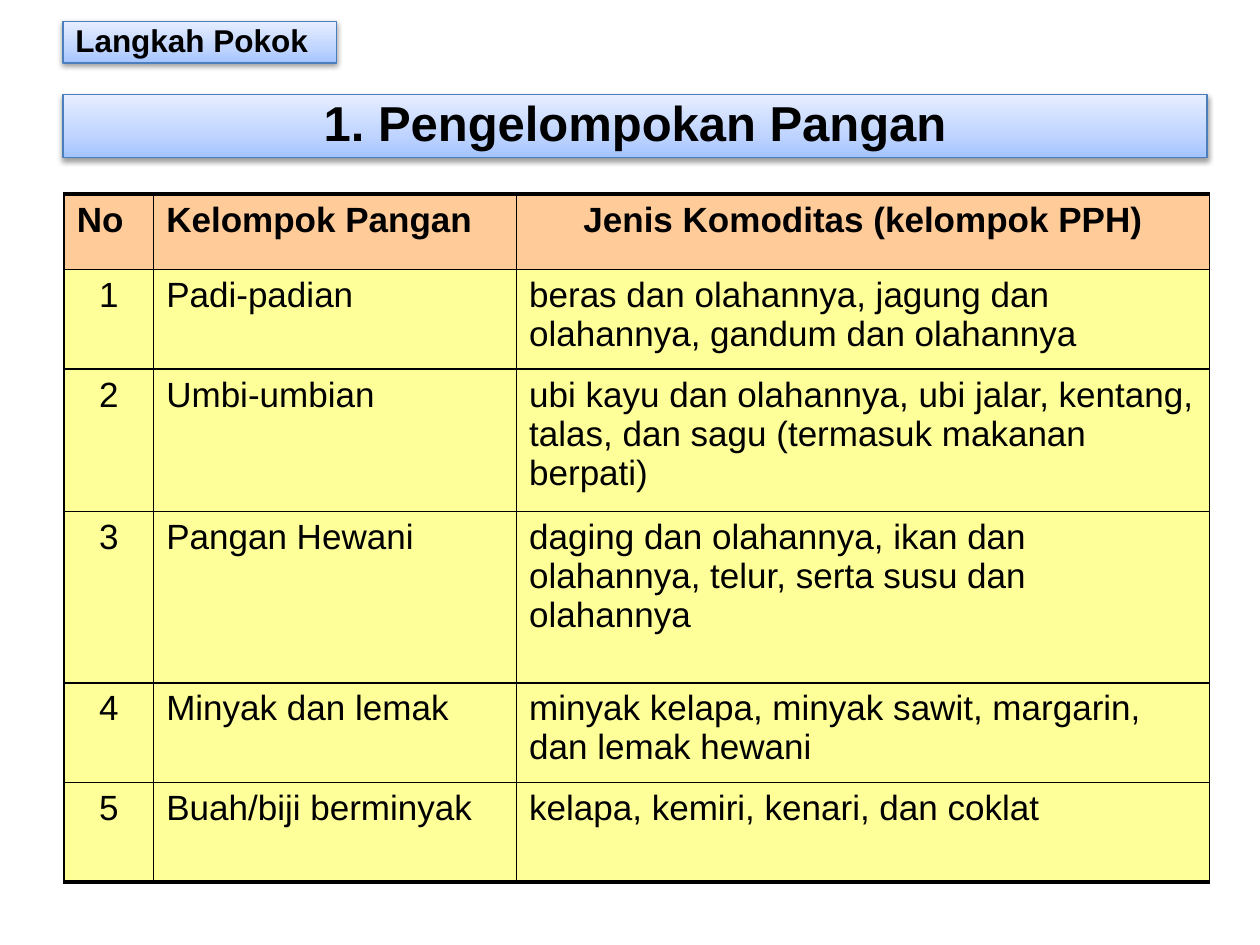
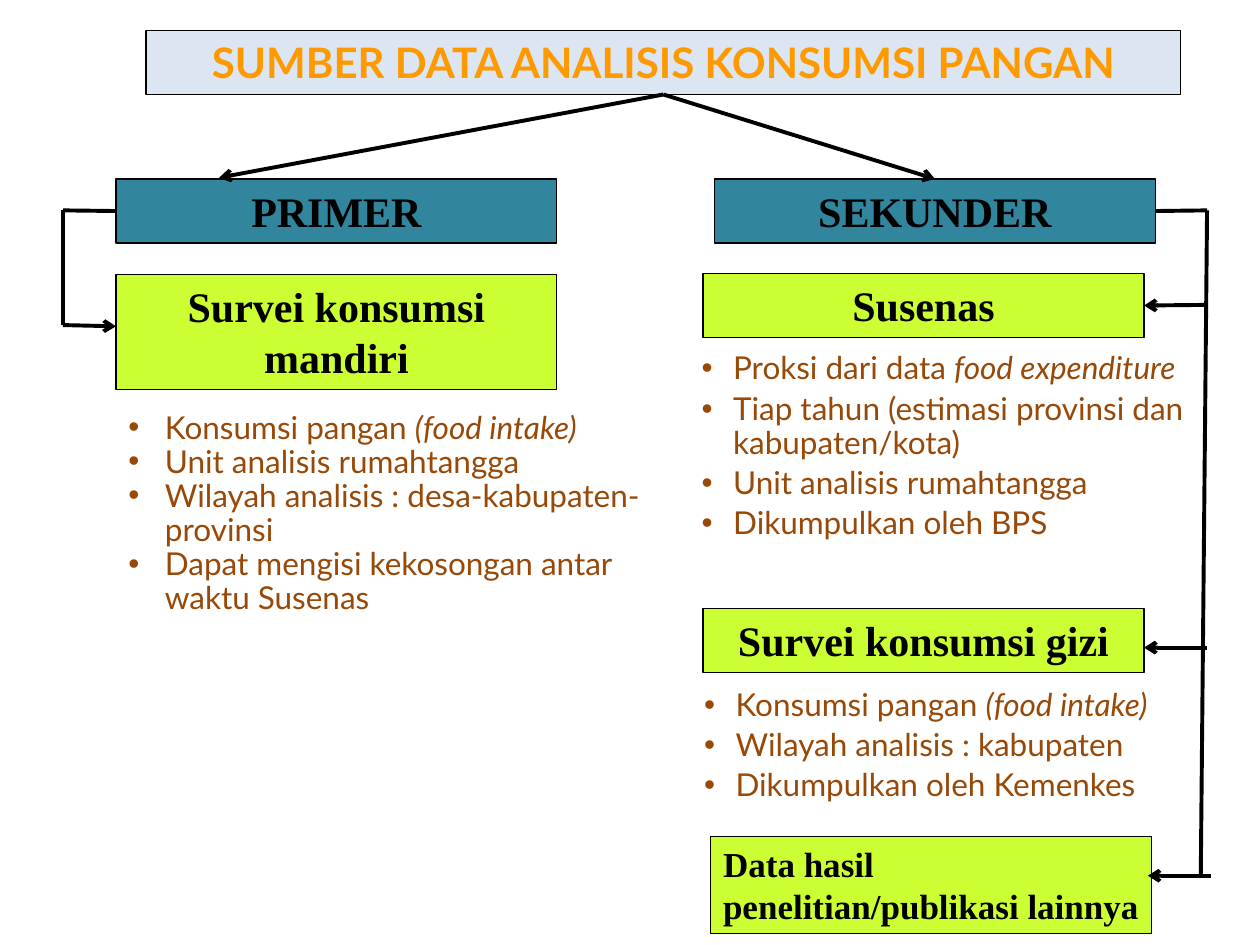
"""Build two slides on food groups and food consumption data sources."""
from lxml import etree
from pptx import Presentation
from pptx import util as u
from pptx.dml.color import RGBColor
from pptx.enum import shapes, text
from pptx.oxml import parse_xml
from pptx.oxml.ns import nsdecls, qn

BLACK = RGBColor(0x00, 0x00, 0x00)
PEACH = RGBColor(0xFF, 0xCC, 0x99)
YELLOW = RGBColor(0xFF, 0xFF, 0x99)
BAND_LINE = RGBColor(0x4B, 0x7E, 0xBC)
PALE_BLUE = RGBColor(0xDC, 0xE6, 0xF2)
ORANGE = RGBColor(0xFF, 0x99, 0x00)
TEAL = RGBColor(0x31, 0x85, 0x9C)
LIME = RGBColor(0xCC, 0xFF, 0x33)
BROWN = RGBColor(0x98, 0x48, 0x07)
BAND_STOPS = [(0, "A4C4FF"), (35, "BFD4FF"), (100, "E6EEFF")]
SANS, BODY, SERIF = "Arial", "Lato", "Times New Roman"
LEFT, CENTER = text.PP_ALIGN.LEFT, text.PP_ALIGN.CENTER

BANDS = [
    ("1. Pengelompokan Pangan", (0.5, 0.75, 9.08, 0.5), 28, CENTER),
    ("Langkah Pokok", (0.5, 0.17, 2.17, 0.33), 18, LEFT),
]
FOOD_GROUPS = [
    ("No", "Kelompok Pangan", "Jenis Komoditas (kelompok PPH)"),
    ("1", "Padi-padian", "beras dan olahannya, jagung dan olahannya, gandum dan olahannya"),
    ("2", "Umbi-umbian", "ubi kayu dan olahannya, ubi jalar, kentang, talas, dan sagu "
                         "(termasuk makanan berpati)"),
    ("3", "Pangan Hewani", "daging dan olahannya, ikan dan olahannya, telur, serta susu "
                           "dan olahannya"),
    ("4", "Minyak dan lemak", "minyak kelapa, minyak sawit, margarin, dan lemak hewani"),
    ("5", "Buah/biji berminyak", "kelapa, kemiri, kenari, dan coklat"),
]
COLUMN_WIDTHS = [0.71, 2.88, 5.5]
ROW_HEIGHTS = [0.6, 0.79, 1.13, 1.36, 0.79, 0.79]

SOURCE_BOXES = {
    "title": ("SUMBER DATA ANALISIS KONSUMSI PANGAN", (1.16, 0.24, 8.21, 0.51),
              PALE_BLUE, BODY, 24, ORANGE, CENTER),
    "primary": ("PRIMER", (0.92, 1.42, 3.5, 0.51), TEAL, SERIF, 24, BLACK, CENTER),
    "secondary": ("SEKUNDER", (5.67, 1.42, 3.5, 0.51), TEAL, SERIF, 24, BLACK, CENTER),
    "own survey": ("Survei konsumsi mandiri", (0.92, 2.18, 3.5, 0.91),
                   LIME, SERIF, 24, BLACK, CENTER),
    "nutrition": ("Survei konsumsi gizi", (5.58, 4.83, 3.5, 0.51),
                  LIME, SERIF, 24, BLACK, CENTER),
    "susenas": ("Susenas", (5.58, 2.17, 3.5, 0.51), LIME, SERIF, 24, BLACK, CENTER),
    "other": ("Data hasil penelitian/publikasi lainnya", (5.64, 6.64, 3.5, 0.77),
              LIME, SERIF, 20, BLACK, LEFT),
}
BULLET_LISTS = [
    ((5.42, 2.75, 4.25, 2.92), 0.3, 0.25, 3.6, [
        ("Proksi dari data ", "food expenditure"),
        ("Tiap tahun (estimasi provinsi dan kabupaten/kota)",),
        ("Unit analisis rumahtangga",),
        ("Dikumpulkan oleh BPS",)]),
    ((5.33, 5.42, 4.33, 1.66), 0.41, 0.25, 3.6, [
        ("Konsumsi pangan ", "(food intake)"),
        ("Wilayah analisis : kabupaten",),
        ("Dikumpulkan oleh Kemenkes",)]),
    ((0.92, 3.22, 4.35, 1.86), 0.29, 0.29, 0, [
        ("Konsumsi pangan ", "(food intake)"),
        ("Unit analisis rumahtangga",),
        ("Wilayah analisis : desa-kabupaten-provinsi",),
        ("Dapat mengisi kekosongan antar waktu Susenas",)]),
]
TOP, SIDE_LEFT, BOTTOM, SIDE_RIGHT = range(4)
LINKS = [
    ((5.27, 0.75), (1.74, 1.41), True, ("title", BOTTOM), None),
    ((5.27, 0.75), (7.42, 1.42), True, ("title", BOTTOM), ("secondary", TOP)),
    ((0.92, 1.67), (0.5, 1.67), False, ("primary", SIDE_LEFT), None),
    ((0.5, 1.67), (0.5, 2.58), False, None, None),
    ((0.5, 2.58), (0.92, 2.59), True, None, None),
    ((9.58, 1.67), (9.53, 6.95), False, None, None),
    ((9.58, 1.67), (9.17, 1.67), False, None, ("secondary", SIDE_RIGHT)),
    ((9.58, 2.42), (9.08, 2.42), True, None, ("susenas", SIDE_RIGHT)),
    ((9.58, 5.14), (9.08, 5.14), True, None, None),
    ((9.61, 6.95), (9.11, 6.95), True, None, None),
]


def inches(values):
    return [u.Inches(value) for value in values]


def add_span(para, words, font, size, color, bold=False, italic=False):
    span = para.add_run()
    span.text = words
    span.font.name = font
    span.font.size = u.Pt(size)
    span.font.color.rgb = color
    span.font.bold = bold
    span.font.italic = italic


def add_box(page, words, place, font, size, color, align, line_color):
    box = page.shapes.add_shape(shapes.MSO_SHAPE.RECTANGLE, *inches(place))
    box.shadow.inherit = False
    box.line.color.rgb = line_color
    box.line.width = u.Pt(0.75)
    frame = box.text_frame
    frame.word_wrap = True
    frame.vertical_anchor = text.MSO_ANCHOR.TOP
    para = frame.paragraphs[0]
    para.alignment = align
    add_span(para, words, font, size, color, bold=True)
    return box


def add_band(page, words, place, size, align):
    band = add_box(page, words, place, SANS, size, BLACK, align, BAND_LINE)
    band.text_frame.vertical_anchor = text.MSO_ANCHOR.MIDDLE
    band.text_frame.paragraphs[0].line_spacing = 0.9
    band.fill.gradient()
    band.fill.gradient_angle = 90
    properties = band._element.spPr
    stops = properties.find(".//" + qn("a:gsLst"))
    for stop in list(stops):
        stops.remove(stop)
    for position, color in BAND_STOPS:
        stop = etree.SubElement(stops, qn("a:gs"), pos=str(position * 1000))
        etree.SubElement(stop, qn("a:srgbClr"), val=color)
    properties.find(qn("a:effectLst")).append(parse_xml(
        f'<a:outerShdw {nsdecls("a")} blurRad="40000" dist="20000" dir="5400000" '
        'rotWithShape="0"><a:srgbClr val="000000"><a:alpha val="38000"/></a:srgbClr>'
        '</a:outerShdw>'))


def set_borders(cell, top, bottom):
    properties = cell._tc.get_or_add_tcPr()
    widths = {"a:lnL": 1, "a:lnR": 1, "a:lnT": top, "a:lnB": bottom}
    for index, (tag, width) in enumerate(widths.items()):
        properties.insert(index, parse_xml(
            f'<{tag} {nsdecls("a")} w="{u.Pt(width)}"><a:solidFill>'
            f'<a:srgbClr val="{BLACK}"/></a:solidFill></{tag}>'))


def add_food_table(page):
    place = inches((0.51, 1.54, sum(COLUMN_WIDTHS), sum(ROW_HEIGHTS)))
    table = page.shapes.add_table(len(FOOD_GROUPS), len(COLUMN_WIDTHS), *place).table
    table.first_row = table.horz_banding = False
    for column, width in zip(table.columns, COLUMN_WIDTHS):
        column.width = u.Inches(width)
    last = len(FOOD_GROUPS) - 1
    for r, (entries, height) in enumerate(zip(FOOD_GROUPS, ROW_HEIGHTS)):
        table.rows[r].height = u.Inches(height)
        header = r == 0
        for c, words in enumerate(entries):
            cell = table.cell(r, c)
            cell.fill.solid()
            cell.fill.fore_color.rgb = PEACH if header else YELLOW
            set_borders(cell, 2.25 if header else 1, 2.25 if r == last else 1)
            para = cell.text_frame.paragraphs[0]
            para.alignment = CENTER if c == (2 if header else 0) else LEFT
            add_span(para, words, SANS, 20, BLACK, bold=header)


def add_bullets(page, place, margin, hanging, gap, items):
    frame = page.shapes.add_textbox(*inches(place)).text_frame
    frame.word_wrap = True
    for index, parts in enumerate(items):
        para = frame.add_paragraph() if index else frame.paragraphs[0]
        properties = para._p.get_or_add_pPr()
        properties.set("marL", str(u.Inches(margin)))
        properties.set("indent", str(-u.Inches(hanging)))
        etree.SubElement(properties, qn("a:buFont"), typeface=SANS)
        etree.SubElement(properties, qn("a:buChar"), char="•")
        para.line_spacing = 0.9
        para.space_before = u.Pt(gap if index else 0)
        for order, words in enumerate(parts):
            add_span(para, words, BODY, 18, BROWN, italic=order == 1)


def add_link(page, boxes, start, end, arrow, begin_at, end_at):
    link = page.shapes.add_connector(shapes.MSO_CONNECTOR.STRAIGHT, *inches(start + end))
    if begin_at:
        link.begin_connect(boxes[begin_at[0]], begin_at[1])
    if end_at:
        link.end_connect(boxes[end_at[0]], end_at[1])
    link.line.color.rgb = BLACK
    link.line.width = u.Pt(2.25)
    if arrow:
        etree.SubElement(link.line._get_or_add_ln(), qn("a:tailEnd"), type="arrow")
    etree.SubElement(link._element.spPr, qn("a:effectLst"))


def build_groups(page):
    add_food_table(page)
    for band in BANDS:
        add_band(page, *band)


def build_sources(page):
    boxes = {}
    for name, (words, place, fill, font, size, color, align) in SOURCE_BOXES.items():
        box = add_box(page, words, place, font, size, color, align, BLACK)
        box.fill.solid()
        box.fill.fore_color.rgb = fill
        boxes[name] = box
    for bullets in BULLET_LISTS:
        add_bullets(page, *bullets)
    for link in LINKS:
        add_link(page, boxes, *link)


def main():
    deck = Presentation()
    deck.slide_width, deck.slide_height = inches((10, 7.5))
    for build in (build_groups, build_sources):
        build(deck.slides.add_slide(deck.slide_layouts[6]))
    deck.save("out.pptx")


if __name__ == "__main__":
    main()
